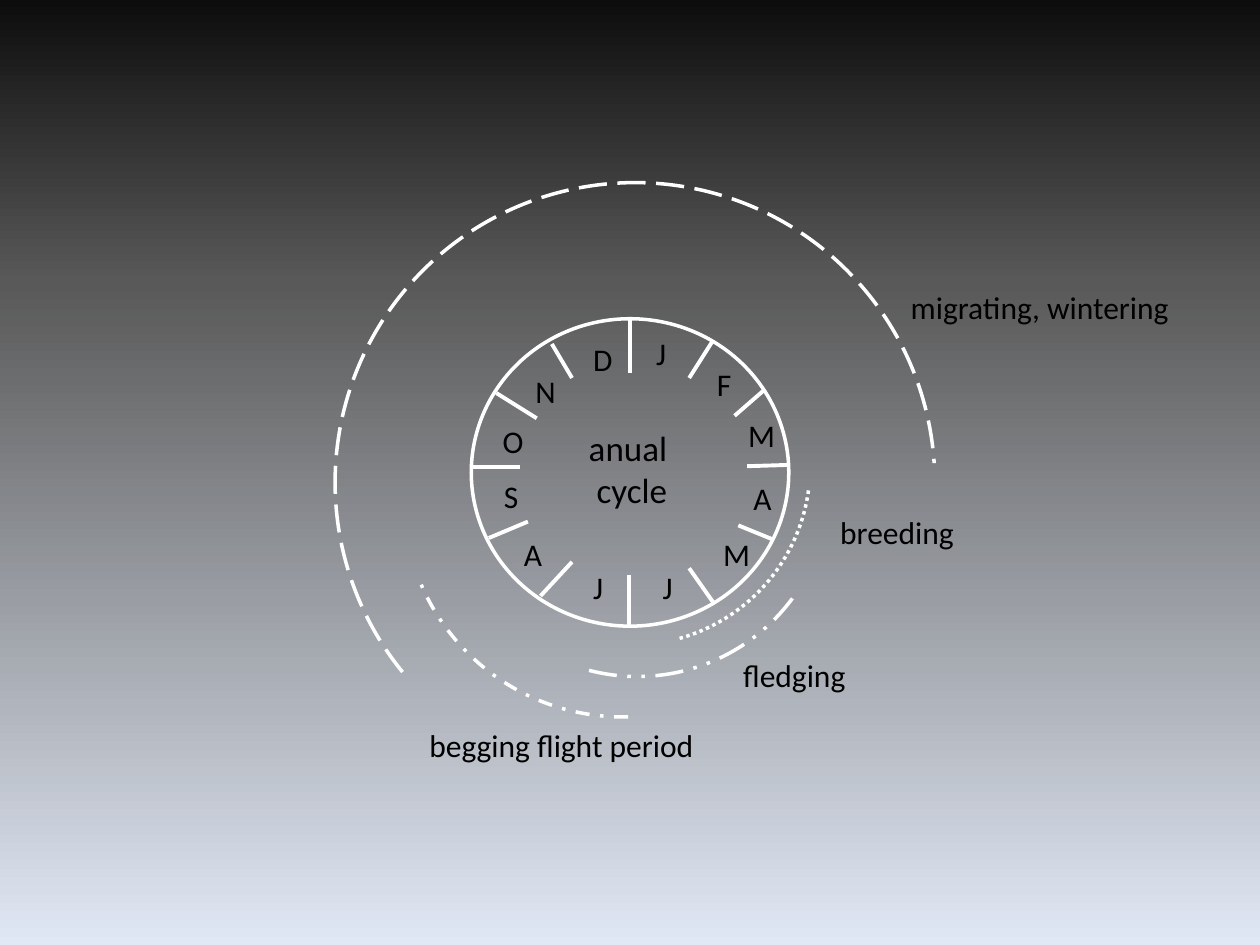
import copy

import pptx
import pptx.dml.color
import pptx.enum.dml
import pptx.enum.shapes
import pptx.enum.text
import pptx.oxml
import pptx.oxml.ns
import pptx.util

Inches = pptx.util.Inches
Pt = pptx.util.Pt
SHAPE = pptx.enum.shapes.MSO_SHAPE
DASH = pptx.enum.dml.MSO_LINE
ANCHOR = pptx.enum.text.MSO_ANCHOR
qn = pptx.oxml.ns.qn

WHITE, BLACK = "FFFFFF", "000000"
FONT = "Calibri"
BACKGROUND = [(0, "0D0D0D"), (0.3, "595959"), (1, "E1E8F5")]

TITLE = ["anual ", "cycle"]
TITLE_BOX = (4.34, 3.29, 1.35, 0.85)
YEAR_RING = (3.74, 2.53, 2.52, 2.44)

# Month letters: text, left, top, width
MONTHS = [
    ("J", 5.11, 2.6, 0.28), ("F", 5.59, 2.85, 0.32), ("M", 5.84, 3.25, 0.47),
    ("A", 5.88, 3.75, 0.35), ("M", 5.64, 4.2, 0.42), ("J", 5.16, 4.46, 0.28),
    ("J", 4.61, 4.46, 0.28), ("A", 4.06, 4.2, 0.35), ("S", 3.9, 3.74, 0.32),
    ("O", 3.89, 3.3, 0.37), ("N", 4.15, 2.9, 0.36), ("D", 4.61, 2.65, 0.36),
]

# Period labels: text, left, top, width
PERIODS = [
    ("breeding", 6.57, 4.02, 1.12),
    ("fledging", 5.8, 5.16, 1.03),
    ("begging flight period", 3.31, 5.71, 2.33),
    ("migrating, wintering", 7.13, 2.24, 2.33),
]

# Period arcs: centre x, centre y, radius, start and end degrees (clockwise), dash
ARCS = [
    (5.04, 3.83, 2.38, 140.8, 356.3, DASH.LONG_DASH),     # migrating, wintering
    (5.01, 3.7, 1.42, 7.8, 74.3, DASH.ROUND_DOT),         # breeding
    (5.06, 3.84, 1.53, 36.5, 106, DASH.DASH_DOT_DOT),     # fledging
    (4.94, 3.95, 1.74, 88.5, 158.8, DASH.DASH_DOT),       # begging flight
]

# Month borders, clockwise from the top: x1, y1, x2, y2
MONTH_BORDERS = [
    (5, 2.53, 5, 2.96), (5.66, 2.7, 5.47, 3), (6.06, 3.1, 5.83, 3.3),
    (6.26, 3.69, 5.93, 3.7), (6.13, 4.28, 5.86, 4.17), (5.47, 4.51, 5.66, 4.78),
    (4.99, 4.56, 4.99, 4.97), (4.54, 4.46, 4.29, 4.73), (4.19, 4.14, 3.88, 4.27),
    (4.13, 3.71, 3.74, 3.71), (3.94, 3.12, 4.26, 3.32), (4.38, 2.73, 4.54, 3),
]


def color(value):
    return pptx.dml.color.RGBColor.from_string(value)


def paint_background(page):
    fill = page.background.fill
    fill.gradient()
    fill.gradient_angle = 270
    stop_list = page._element.find(".//" + qn("a:gsLst"))
    stop_list.append(copy.deepcopy(stop_list[-1]))
    for stop, (position, value) in zip(fill.gradient_stops, BACKGROUND):
        stop.position = position
        stop.color.rgb = color(value)


def add_outline(page, kind, bounds):
    shape = page.shapes.add_shape(kind, *map(Inches, bounds))
    shape.shadow.inherit = False
    shape.fill.background()
    shape.line.color.rgb = color(WHITE)
    shape.line.width = Pt(2)
    return shape


def add_arc(page, x, y, radius, start, end, dash):
    arc = add_outline(page, SHAPE.ARC, (x - radius, y - radius, 2 * radius, 2 * radius))
    # Adjustments count 60000ths of a degree, divided by 100000
    arc.adjustments[0] = start * 0.6
    arc.adjustments[1] = end * 0.6
    arc.line.dash_style = dash


def add_border(page, ends):
    line = page.shapes.add_connector(
        pptx.enum.shapes.MSO_CONNECTOR.STRAIGHT, *map(Inches, ends))
    line.line.color.rgb = color(WHITE)
    line.line.width = Pt(2.25)
    line._element.spPr.append(pptx.oxml.parse_xml(
        '<a:effectLst xmlns:a="http://schemas.openxmlformats.org/drawingml/2006/main"/>'))


def add_text(page, lines, bounds, size=18, wrap=False, align=None, anchor=ANCHOR.TOP):
    box = page.shapes.add_textbox(*map(Inches, bounds))
    frame = box.text_frame
    frame.word_wrap = wrap
    frame.vertical_anchor = anchor
    para = frame.paragraphs[0]
    para.alignment = align
    for index, line in enumerate(lines):
        if index:
            para.add_line_break()
        span = para.add_run()
        span.text = line
        span.font.name = FONT
        span.font.size = Pt(size)
        span.font.color.rgb = color(BLACK)


def main():
    deck = pptx.Presentation()
    deck.slide_width, deck.slide_height = Inches(10), Inches(7.5)
    page = deck.slides.add_slide(deck.slide_layouts[6])
    paint_background(page)

    # Year ring with its twelve months
    add_text(page, TITLE, TITLE_BOX, 20, True,
             pptx.enum.text.PP_ALIGN.CENTER, ANCHOR.MIDDLE)
    add_outline(page, SHAPE.OVAL, YEAR_RING)
    for ends in MONTH_BORDERS:
        add_border(page, ends)

    # Periods around the ring
    for arc in ARCS:
        add_arc(page, *arc)

    # Month letters and period names
    for text, left, top, width in MONTHS + PERIODS:
        add_text(page, [text], (left, top, width, 0.4))

    deck.save("out.pptx")


if __name__ == "__main__":
    main()
